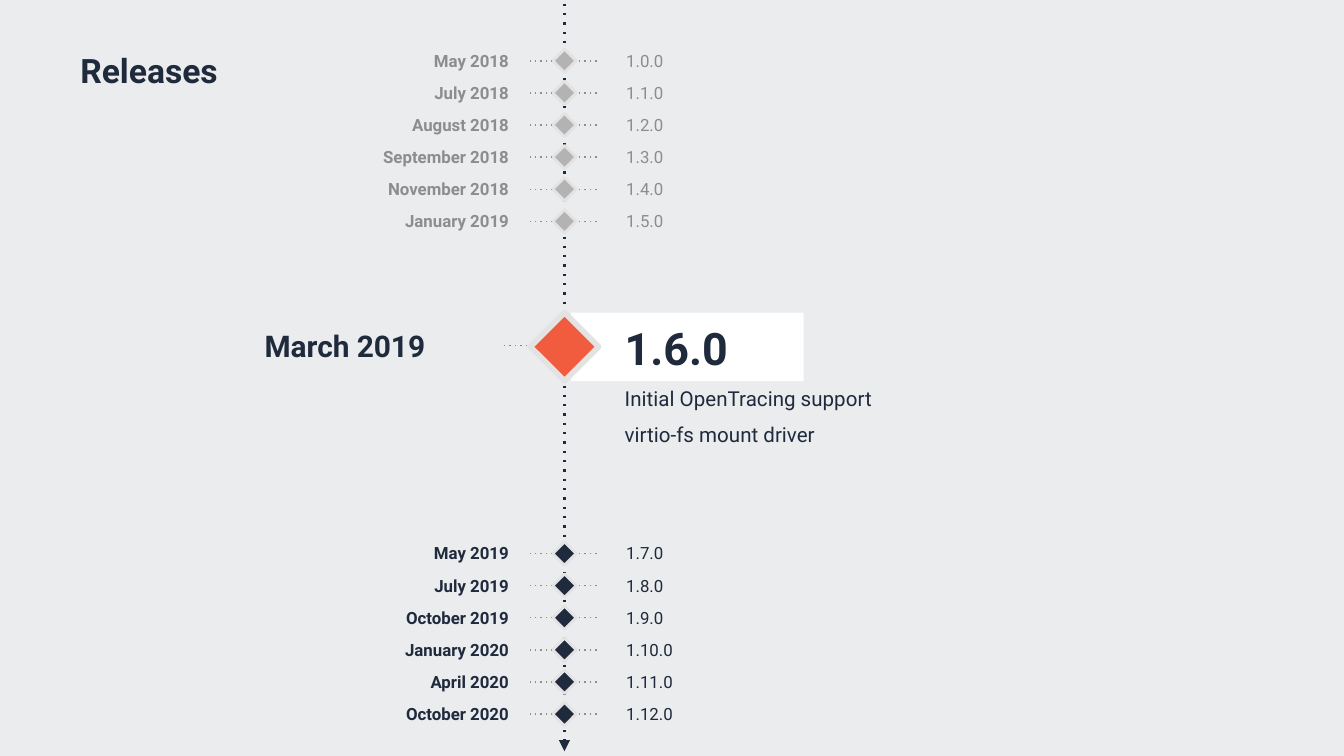
from lxml import etree
from pptx import Presentation
from pptx.dml.color import RGBColor
from pptx.enum.shapes import MSO_CONNECTOR as Connector, MSO_SHAPE as Shape
from pptx.enum.text import MSO_ANCHOR as Anchor, PP_ALIGN as Align
from pptx.oxml.ns import qn
from pptx.util import Pt

FONT = "Roboto"
NAVY = RGBColor(0x1F, 0x2A, 0x3D)
GREY = RGBColor(0x8D, 0x8D, 0x8D)
SILVER = RGBColor(0xB3, 0xB3, 0xB3)
EDGE = RGBColor(0xE3, 0xE3, 0xE3)
ORANGE = RGBColor(0xF1, 0x5B, 0x3E)
WHITE = RGBColor(0xFF, 0xFF, 0xFF)
BACKGROUND = RGBColor(0xEB, 0xEC, 0xED)

AXIS_X = 302.4
ROW_STEP = 17.2
PAST = [("May 2018", "1.0.0"), ("July 2018", "1.1.0"),
        ("August 2018", "1.2.0"), ("September 2018", "1.3.0"),
        ("November 2018", "1.4.0"), ("January 2019", "1.5.0")]
FUTURE = [("May 2019", "1.7.0"), ("July 2019", "1.8.0"),
          ("October 2019", "1.9.0"), ("January 2020", "1.10.0"),
          ("April 2020", "1.11.0"), ("October 2020", "1.12.0")]


def add_para(frame, text, *, first=False, size=9, color=NAVY, bold=False,
             align=Align.LEFT, before=0):
    para = frame.paragraphs[0] if first else frame.add_paragraph()
    para.alignment = align
    para.space_before = Pt(before)
    span = para.add_run()
    span.text = text
    span.font.name = FONT
    span.font.size = Pt(size)
    span.font.bold = bold
    span.font.color.rgb = color


def add_text(page, text, left, top, width, height, *, inset=(7.2, 7.2),
             left_inset=None, anchor=Anchor.TOP, **style):
    box = page.shapes.add_textbox(Pt(left), Pt(top), Pt(width), Pt(height))
    frame = box.text_frame
    frame.word_wrap = True
    frame.vertical_anchor = anchor
    side, end = inset
    frame.margin_left = Pt(side if left_inset is None else left_inset)
    frame.margin_right = Pt(side)
    frame.margin_top = frame.margin_bottom = Pt(end)
    add_para(frame, text, first=True, **style)
    return frame


def add_dotted_line(page, start, end, color, *, width=0.75, arrow=False):
    line = page.shapes.add_connector(
        Connector.STRAIGHT, *(Pt(value) for value in (*start, *end)))
    line.line.color.rgb = color
    line.line.width = Pt(width)
    properties = line._element.spPr
    outline = properties.find(qn("a:ln"))
    etree.SubElement(outline, qn("a:prstDash"), val="dot")
    if arrow:
        etree.SubElement(outline, qn("a:tailEnd"), type="triangle")
    etree.SubElement(properties, qn("a:effectLst"))


def add_rectangle(page, left, top, width, height, fill):
    shape = page.shapes.add_shape(
        Shape.RECTANGLE, Pt(left), Pt(top), Pt(width), Pt(height))
    shape.shadow.inherit = False
    shape.fill.solid()
    shape.fill.fore_color.rgb = fill
    shape.line.fill.background()
    return shape


def add_marker(page, y, side, fill, edge_width):
    marker = add_rectangle(page, AXIS_X - side / 2, y - side / 2, side, side, fill)
    marker.rotation = 45
    marker.line.color.rgb = EDGE
    marker.line.width = Pt(edge_width)


def add_releases(page, releases, first_y, text_color, marker_color):
    for row, (date, version) in enumerate(releases):
        y = first_y + row * ROW_STEP
        style = {"inset": (2.88, 3.6), "color": text_color}
        add_text(page, date, 199.4, y - 9.2, 76, 18, bold=True,
                 align=Align.RIGHT, **style)
        add_text(page, version, 332.6, y - 9.2, 36, 18, **style)
        add_dotted_line(page, (AXIS_X + 17.3, y), (AXIS_X - 18.7, y), GREY)
        add_marker(page, y, 8.9, marker_color, 1.5)


def add_current_release(page):
    add_dotted_line(page, (306, 185), (270, 185), ORANGE)
    add_rectangle(page, 306, 167.5, 124.6, 36.7, WHITE)
    frame = add_text(page, "1.6.0", 327.6, 164.9, 324.7, 177, size=24, bold=True)
    for feature in ("Initial OpenTracing support", "virtio-fs mount driver"):
        add_para(frame, feature, size=11, before=6)
    add_text(page, "March 2019", 127.4, 164.9, 149.8, 41, left_inset=14.4,
             anchor=Anchor.MIDDLE, size=16, bold=True)
    add_marker(page, 185.8, 25.9, ORANGE, 3)


def main():
    deck = Presentation()
    deck.slide_width, deck.slide_height = Pt(720), Pt(405)
    page = deck.slides.add_slide(deck.slide_layouts[6])
    page.background.fill.solid()
    page.background.fill.fore_color.rgb = BACKGROUND

    # Title and vertical time axis
    add_text(page, "Releases", 36, 7.2, 161.3, 60.5, anchor=Anchor.MIDDLE,
             size=18, bold=True)
    add_dotted_line(page, (AXIS_X, 2), (AXIS_X, 402.5), NAVY,
                    width=1.25, arrow=True)

    # Future, past and current releases
    add_releases(page, FUTURE, 296.6, NAVY, NAVY)
    add_releases(page, PAST, 32.6, GREY, SILVER)
    add_current_release(page)

    deck.save("out.pptx")


if __name__ == "__main__":
    main()
